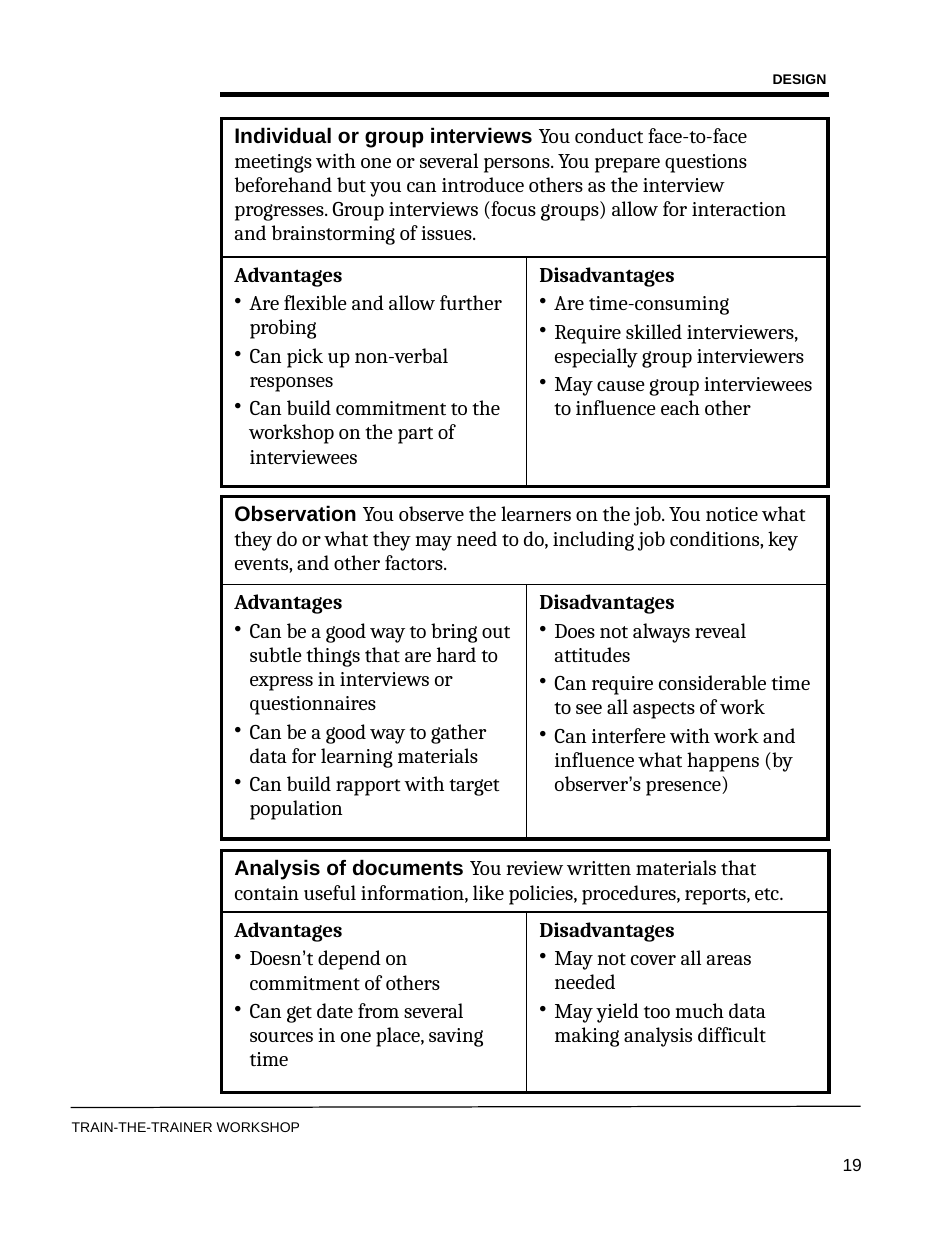
import pptx
import pptx.util
import pptx.dml.color
import pptx.enum.shapes
import pptx.enum.text
import pptx.oxml
import pptx.oxml.ns
import lxml.etree

COLORS = {"ink": "000000"}
INK = pptx.dml.color.RGBColor.from_string(COLORS["ink"])
ALIGN = pptx.enum.text.PP_ALIGN
qn = pptx.oxml.ns.qn

METHODS = [
    {
        "name": "Individual or group interviews ",
        "summary": "You conduct face-to-face meetings with one or several persons. You prepare "
                   "questions beforehand but you can introduce others as the interview progresses. "
                   "Group interviews (focus groups) allow for interaction and brainstorming of issues.",
        "Advantages": ["Are flexible and allow further probing",
                       "Can pick up non-verbal responses",
                       "Can build commitment to the workshop on the part of interviewees"],
        "Disadvantages": ["Are time-consuming",
                          "Require skilled interviewers, especially group interviewers",
                          "May cause group interviewees to influence each other"],
        "top": 9.4, "heights": (11, 18.2), "widths": (32.27, 31.87),
    },
    {
        "name": "Observation ",
        "summary": "You observe the learners on the job. You notice what they do or what they may "
                   "need to do, including job conditions, key events, and other factors.",
        "Advantages": ["Can be a good way to bring out subtle things that are hard to express in "
                       "interviews or questionnaires",
                       "Can be a good way to gather data for learning materials",
                       "Can build rapport with target population"],
        "Disadvantages": ["Does not always reveal attitudes",
                          "Can require considerable time to see all aspects of work",
                          "Can interfere with work and influence what happens (by observer’s presence)"],
        "top": 39.4, "heights": (7, 20.2), "widths": (32.27, 31.87),
    },
    {
        "name": "Analysis of documents ",
        "summary": "You review written materials that contain useful information, like policies, "
                   "procedures, reports, etc.",
        "Advantages": ["Doesn’t depend on commitment of others",
                       "Can get date from several sources in one place, saving time"],
        "Disadvantages": ["May not cover all areas needed",
                          "May yield too much data making analysis difficult"],
        "top": 67.5, "heights": (4.9, 14.3), "widths": (32.27, 32),
    },
]


def add_span(para, text, font="Cambria", size=12, bold=False):
    span = para.add_run()
    span.text = text
    span.font.name = font
    span.font.size = pptx.util.Pt(size)
    span.font.bold = bold
    span.font.color.rgb = INK


def add_border(cell, side, points):
    """Draw one side of a cell: L, R, T or B."""
    properties = cell._tc.get_or_add_tcPr()
    line = lxml.etree.SubElement(properties, qn("a:ln" + side), w=str(pptx.util.Pt(points)))
    fill = lxml.etree.SubElement(line, qn("a:solidFill"))
    lxml.etree.SubElement(fill, qn("a:srgbClr"), val=COLORS["ink"])


deck = pptx.Presentation()
deck.slide_width = pptx.util.Inches(7.5)
deck.slide_height = pptx.util.Inches(10)
page = deck.slides.add_slide(deck.slide_layouts.get_by_name("Title Only"))

# The page is a grid of 100 columns by 100 rows
column = deck.slide_width / 100
row = deck.slide_height / 100

# Header, footer and page number
heading = page.shapes.title
footer = page.shapes.add_textbox(0, 0, 0, 0)
number = page.shapes.add_textbox(0, 0, 0, 0)
for box, text, size, bold, align, left, top, width, height in [
    (footer, "TRAIN-THE-TRAINER WORKSHOP", 8, False, ALIGN.LEFT, 6.27, 88.3, 46.67, 2.3),
    (number, "19", 10, False, ALIGN.RIGHT, 71.73, 91.1, 20.8, 6.7),
    (heading, "DESIGN", 8, True, ALIGN.RIGHT, 54.4, 5.1, 34.4, 2.3),
]:
    box.left, box.width = int(left * column), int(width * column)
    box.top, box.height = int(top * row), int(height * row)
    frame = box.text_frame
    frame.word_wrap = True
    frame.auto_size = pptx.enum.text.MSO_AUTO_SIZE.NONE
    frame.vertical_anchor = pptx.enum.text.MSO_ANCHOR.TOP
    para = frame.paragraphs[0]
    para.alignment = align
    add_span(para, text, "Arial", size, bold)

# Rules under the header and above the footer
for left, top, right, bottom, weight in [(23.33, 7.5, 87.73, 7.5, 3), (7.47, 87.9, 91.07, 87.8, 0.7)]:
    rule = page.shapes.add_connector(
        pptx.enum.shapes.MSO_CONNECTOR.STRAIGHT,
        int(left * column), int(top * row), int(right * column), int(bottom * row))
    rule.line.color.rgb = INK
    rule.line.width = pptx.util.Pt(weight)
    lxml.etree.SubElement(rule._element.spPr, qn("a:effectLst"))

# One table for each method
for method in METHODS:
    widths = [int(width * column) for width in method["widths"]]
    heights = [int(height * row) for height in method["heights"]]
    table = page.shapes.add_table(
        2, 2, int(23.47 * column), int(method["top"] * row), sum(widths), sum(heights)).table
    table.first_row = False
    table.horz_banding = False
    for index in range(2):
        table.columns[index].width = widths[index]
        table.rows[index].height = heights[index]
    table.cell(0, 0).merge(table.cell(0, 1))

    for r in range(2):
        for c in range(2):
            cell = table.cell(r, c)
            if not cell.is_spanned:
                add_border(cell, "L", 1 if c else 2.25)
            add_border(cell, "R", 2.25 if c or cell.is_merge_origin else 1)
            add_border(cell, "T", 1 if r else 2.25)
            add_border(cell, "B", 2.25 if r else 1)
            cell.fill.background()

    para = table.cell(0, 0).text_frame.paragraphs[0]
    add_span(para, method["name"], "Arial", bold=True)
    add_span(para, method["summary"])

    for c, label in enumerate(["Advantages", "Disadvantages"]):
        frame = table.cell(1, c).text_frame
        add_span(frame.paragraphs[0], label, bold=True)
        for point in method[label]:
            para = frame.add_paragraph()
            properties = para._p.get_or_add_pPr()
            indent = pptx.util.Inches(0.12)
            properties.set("marL", str(indent))
            properties.set("indent", str(-indent))
            lxml.etree.SubElement(properties, qn("a:buChar"), char="•")
            para.space_before = pptx.util.Pt(2.4)
            before, apostrophe, after = point.partition("’")
            add_span(para, before)
            if apostrophe:
                add_span(para, apostrophe, "Arial")
                add_span(para, after)

deck.save("out.pptx")
